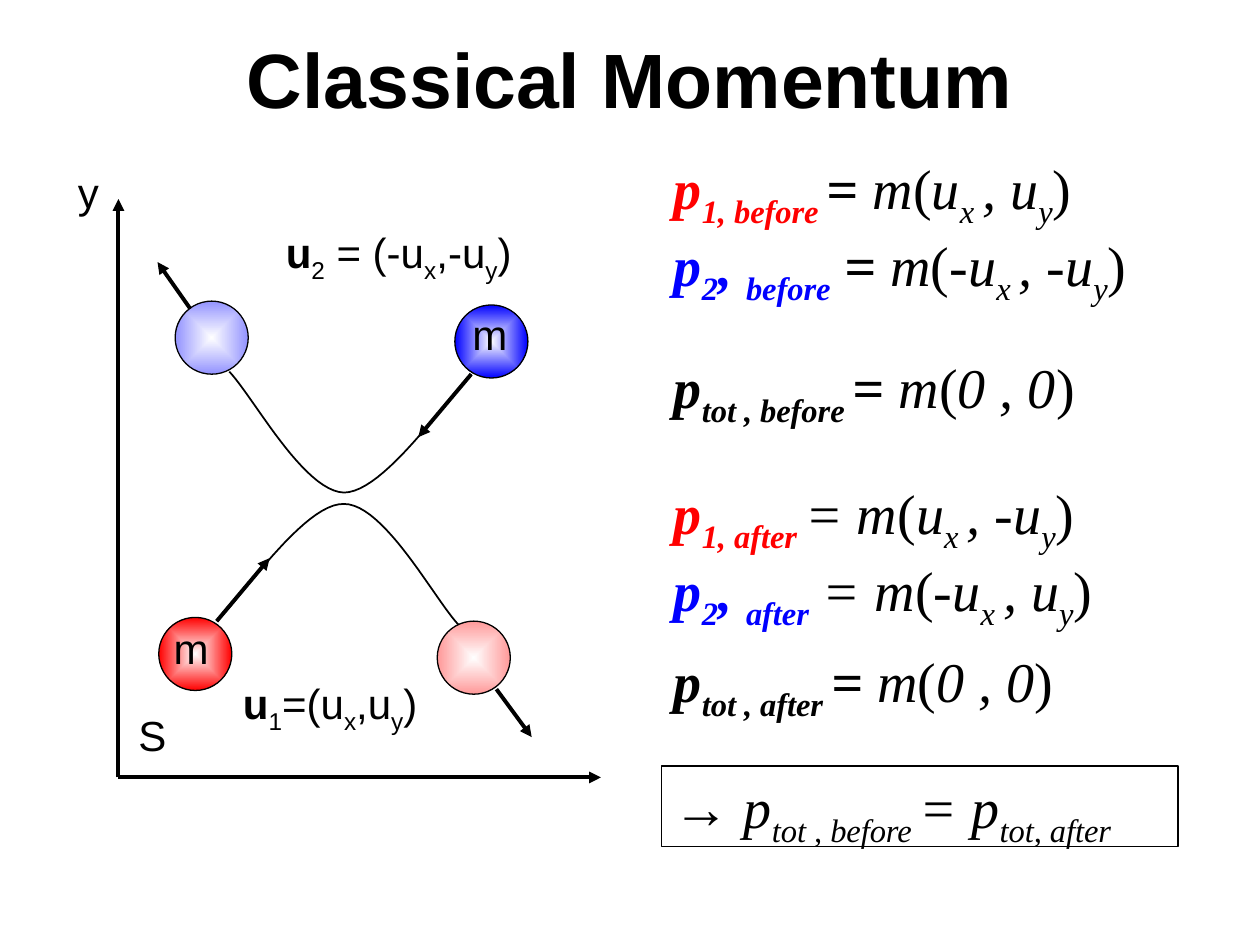
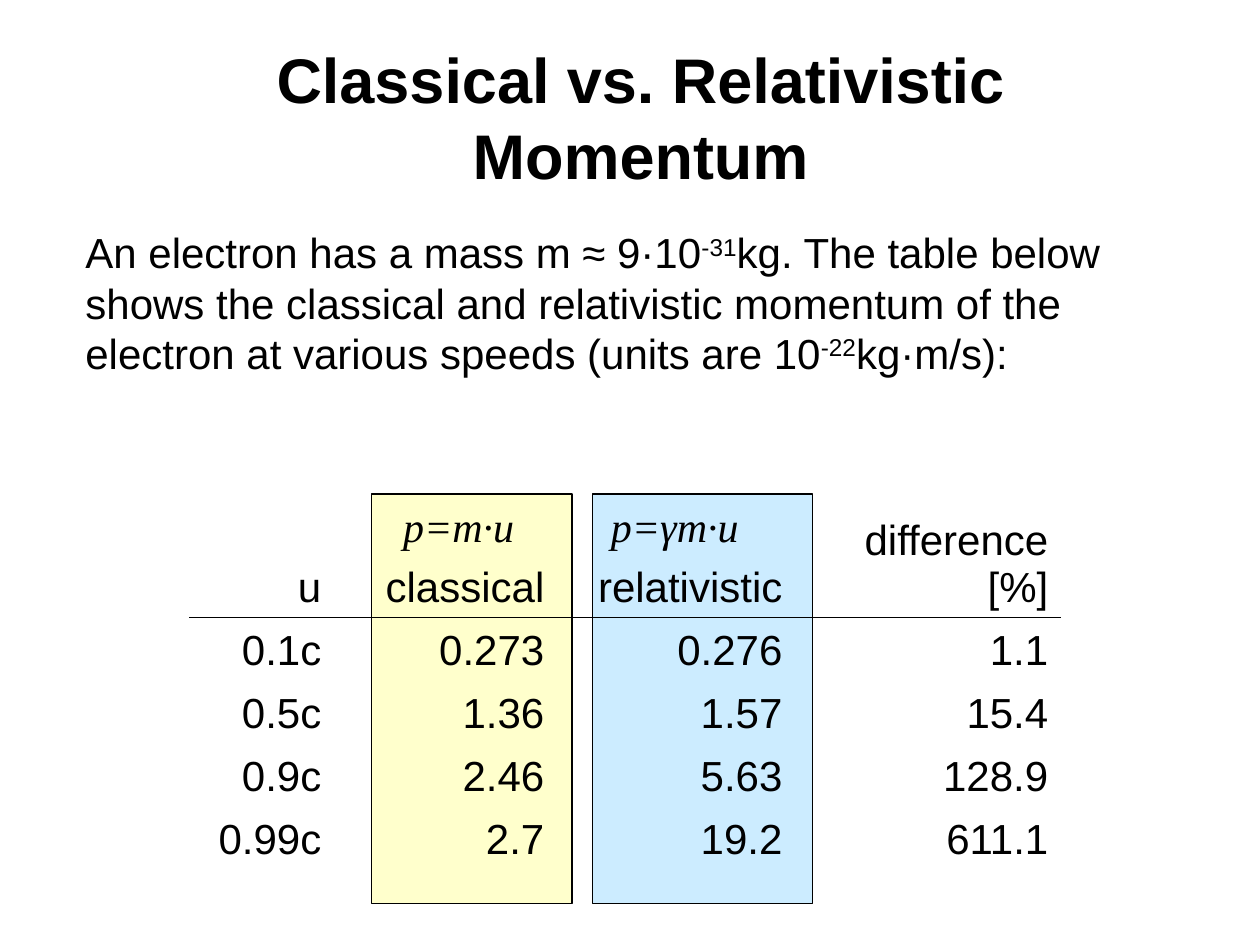
"""Build two slides on classical and relativistic momentum."""
from dataclasses import dataclass

import pptx
import pptx.chart.data
import pptx.dml.color
import pptx.enum.shapes
import pptx.enum.text
import pptx.oxml.ns
import pptx.util
from lxml import etree

Inches = pptx.util.Inches
Pt = pptx.util.Pt
qn = pptx.oxml.ns.qn
SHAPE = pptx.enum.shapes.MSO_SHAPE
ANCHOR = pptx.enum.text.MSO_ANCHOR
ALIGN = pptx.enum.text.PP_ALIGN


@dataclass(frozen=True)
class Theme:
    """Colours, fonts and sizes shared by the slides."""
    ink: str = "000000"
    white: str = "FFFFFF"
    red: str = "FF0000"
    pale_red: str = "FF9999"
    blue: str = "0000FF"
    pale_blue: str = "9393FF"
    yellow: str = "FFFFCC"
    sky: str = "CCECFF"
    sans: str = "Arial"
    serif: str = "Times New Roman"
    label: int = 24
    equation: int = 32
    outline: float = 0.75
    table_line: float = 1
    arrow: float = 2.25


THEME = Theme()
BALL_SIZE = 0.58
EQUATION_LEFT = 5.25
NO_TABLE_STYLE = "{2D5ABB26-0587-4C30-8999-92F81FD0307C}"


def rgb(code):
    """Turn a hex code into a colour."""
    return pptx.dml.color.RGBColor.from_string(code)


def style_run(run, size, font, color=THEME.ink, bold=False, italic=False):
    """Apply the character format to a run."""
    run.font.size = Pt(size)
    run.font.name = font
    run.font.color.rgb = rgb(color)
    run.font.bold = bold
    run.font.italic = italic


def add_runs(paragraph, pieces, size, font):
    """Write (text, flags) pieces: b bold, i italic, r red, l blue, _ sub, ^ super."""
    for text, flags in pieces:
        run = paragraph.add_run()
        run.text = text
        color = THEME.red if "r" in flags else THEME.blue if "l" in flags else THEME.ink
        style_run(run, size, font, color, "b" in flags, "i" in flags)
        if "_" in flags:
            run.font._element.set("baseline", "-25000")
        elif "^" in flags:
            run.font._element.set("baseline", "30000")


def add_text(slide, left, top, width, height, lines,
             size=THEME.label, font=THEME.sans):
    """Add a text box with one paragraph for each line of pieces."""
    box = slide.shapes.add_textbox(Inches(left), Inches(top), Inches(width), Inches(height))
    frame = box.text_frame
    frame.word_wrap = True
    for number, pieces in enumerate(lines):
        paragraph = frame.add_paragraph() if number else frame.paragraphs[0]
        add_runs(paragraph, pieces, size, font)
    return box


def add_equations(slide, top, *lines):
    """Add equations, one to a line, in the right-hand column."""
    return add_text(slide, EQUATION_LEFT, top, 4.1, 0.64 * len(lines), lines,
                    THEME.equation, THEME.serif)


def outline(shape, width=THEME.outline):
    """Give a shape a black outline and no shadow."""
    shape.line.color.rgb = rgb(THEME.ink)
    shape.line.width = Pt(width)
    shape.shadow.inherit = False


def add_panel(slide, left, width, color):
    """Add a coloured panel behind a table column."""
    panel = slide.shapes.add_shape(SHAPE.RECTANGLE, Inches(left), Inches(3.92),
                                   Inches(width), Inches(3.25))
    panel.fill.solid()
    panel.fill.fore_color.rgb = rgb(color)
    outline(panel)


def add_ball(slide, left, top, color):
    """Add a ball shaded from a white centre to its colour."""
    ball = slide.shapes.add_shape(SHAPE.OVAL, Inches(left), Inches(top),
                                  Inches(BALL_SIZE), Inches(BALL_SIZE))
    ball.fill.gradient()
    for stop, shade, position in zip(ball.fill.gradient_stops, (THEME.white, color), (0, 1)):
        stop.color.rgb = rgb(shade)
        stop.position = position
    gradient = ball._element.spPr.find(qn("a:gradFill"))
    linear = gradient.find(qn("a:lin"))
    radial = etree.Element(qn("a:path"), {"path": "shape"})
    etree.SubElement(radial, qn("a:fillToRect"), dict.fromkeys("ltrb", "50000"))
    gradient.replace(linear, radial)
    outline(ball)


def add_arrow(slide, start, end):
    """Add a straight arrow between two points."""
    arrow = slide.shapes.add_connector(pptx.enum.shapes.MSO_CONNECTOR.STRAIGHT,
                                       *map(Inches, (*start, *end)))
    arrow.line.color.rgb = rgb(THEME.ink)
    arrow.line.width = Pt(THEME.arrow)
    etree.SubElement(arrow.line._get_or_add_ln(), qn("a:tailEnd"), {"type": "triangle"})
    etree.SubElement(arrow._element.spPr, qn("a:effectLst"))


def bezier(points, steps=24):
    """Return points along one cubic curve, without its start."""
    curve = []
    for step in range(1, steps + 1):
        t = step / steps
        weights = ((1 - t) ** 3, 3 * t * (1 - t) ** 2, 3 * t * t * (1 - t), t ** 3)
        curve.append(tuple(Inches(sum(w * point[axis] for w, point in zip(weights, points)))
                           for axis in (0, 1)))
    return curve


def add_trajectory(slide, points):
    """Draw a path through two joined cubic curves."""
    builder = slide.shapes.build_freeform(*map(Inches, points[0]))
    builder.add_line_segments(bezier(points[:4]) + bezier(points[3:]), close=False)
    trajectory = builder.convert_to_shape()
    trajectory.fill.background()
    outline(trajectory, 1)


def add_slide(deck, title, size, left, top, width):
    """Add a slide with a bold centred title."""
    slide = deck.slides.add_slide(deck.slide_layouts[5])
    heading = slide.shapes.title
    heading.left, heading.top = Inches(left), Inches(top)
    heading.width, heading.height = Inches(width), Inches(1.25)
    frame = heading.text_frame
    frame.text = title
    frame.auto_size = pptx.enum.text.MSO_AUTO_SIZE.NONE
    frame.vertical_anchor = ANCHOR.MIDDLE
    frame.paragraphs[0].alignment = ALIGN.CENTER
    for run in frame.paragraphs[0].runs:
        style_run(run, size, THEME.sans, bold=True)
    return slide


def velocity(number, equals, sign=""):
    """Return the pieces of a velocity label."""
    return [("u", "b"), (number, "_"), (f"{equals}({sign}u", ""), ("x", "_"),
            (f",{sign}u", ""), ("y", "_"), (")", "")]


def components(ux, uy):
    """Return the pieces of a bracketed pair of components."""
    return [("m", "i"), ("(", ""), (ux, "i"), ("x ", "i_"), (f", {uy}", "i"),
            ("y", "i_"), (")", "")]


def red_momentum(when, weight):
    """Return the left side for the first ball."""
    return [("p", "bir"), (f"1, {when} ", "bir_"), ("= ", "i" + weight)]


def blue_momentum(when, weight):
    """Return the left side for the second ball."""
    return [("p", "bil"), ("2", "bil_"), (", ", "bil"), (when, "bil_"),
            (" = ", "i" + weight)]


def total_momentum(when):
    """Return the equation for the total momentum."""
    return [("p", "bi"), (f"tot , {when} ", "bi_"), ("= ", "bi"), ("m", "i"),
            ("(", ""), ("0 , 0", "i"), (")", "")]


def add_collision(slide):
    """Draw the two balls, their trajectories and the axes."""
    add_trajectory(slide, [(1.72, 4.93), (1.89, 4.78), (2.41, 3.99), (2.73, 4),
                           (3.05, 4), (3.45, 4.76), (3.64, 4.96)])
    add_trajectory(slide, [(3.74, 2.97), (3.57, 3.13), (3.05, 3.91), (2.73, 3.91),
                           (2.41, 3.9), (2.01, 3.15), (1.82, 2.95)])
    for left, top, color in ((1.26, 4.9, THEME.red), (3.47, 4.93, THEME.pale_red),
                             (3.61, 2.42, THEME.blue), (1.39, 2.39, THEME.pale_blue)):
        add_ball(slide, left, top, color)
    origin = (0.94, 6.17)
    for start, end in (((1.72, 4.93), (2.14, 4.43)), ((3.94, 5.47), (4.22, 5.85)),
                       ((3.74, 2.97), (3.32, 3.47)), ((1.51, 2.45), (1.25, 2.08)),
                       (origin, (4.77, 6.17)), (origin, (0.94, 1.58))):
        add_arrow(slide, start, end)
    for text, left, top in (("y", 0.52, 1.27), ("m", 1.28, 4.89),
                            ("m", 3.65, 2.4), ("S", 1, 5.58)):
        add_text(slide, left, top, 0.55, 0.57, [[(text, "")]])
    add_text(slide, 1.83, 5.33, 1.75, 0.5, [velocity("1", "=")])
    add_text(slide, 2.17, 1.75, 2.16, 0.5, [velocity("2", " = ", "-")])


def add_classical_slide(deck):
    """Build the slide on momentum before and after a collision."""
    slide = add_slide(deck, "Classical Momentum", 44, 0.5, -0.01, 9)
    add_collision(slide)
    add_equations(slide, 1.17, red_momentum("before", "b") + components("u", "u"),
                  blue_momentum("before", "b") + components("-u", "-u"))
    add_equations(slide, 2.75, total_momentum("before"))
    add_equations(slide, 3.75, red_momentum("after", "") + components("u", "-u"),
                  blue_momentum("after", "") + components("-u", "u"))
    add_equations(slide, 5.08, total_momentum("after"))
    conservation = add_equations(slide, 6.08, [("→ ", ""), ("p", "i"), ("tot , before ", "i_"),
                                               ("= p", "i"), ("tot, after", "i_")])
    outline(conservation)


def underline_cell(cell):
    """Draw a line under a table cell."""
    border = etree.Element(qn("a:lnB"), {"w": str(Pt(THEME.table_line))})
    fill = etree.SubElement(border, qn("a:solidFill"))
    etree.SubElement(fill, qn("a:srgbClr"), {"val": THEME.ink})
    cell._tc.get_or_add_tcPr().insert(0, border)


def add_momentum_table(slide, rows, widths):
    """Add the right-aligned table with a line under its header."""
    heights = [0.9] + [0.5] * (len(rows) - 1)
    table = slide.shapes.add_table(len(rows), len(widths), Inches(1.5), Inches(4),
                                   Inches(sum(widths)), Inches(sum(heights))).table
    table.first_row = table.horz_banding = False
    table._tbl.tblPr.find(qn("a:tableStyleId")).text = NO_TABLE_STYLE
    for column, width in zip(table.columns, widths):
        column.width = Inches(width)
    for number, (row, height, values) in enumerate(zip(table.rows, heights, rows)):
        row.height = Inches(height)
        for cell, value in zip(row.cells, values):
            cell.text = value
            cell.fill.background()
            cell.vertical_anchor = ANCHOR.BOTTOM
            paragraph = cell.text_frame.paragraphs[0]
            paragraph.alignment = ALIGN.RIGHT
            style_run(paragraph.runs[0], THEME.label, THEME.sans)
            if number == 0:
                underline_cell(cell)


def add_comparison_slide(deck):
    """Build the slide comparing classical and relativistic momentum."""
    slide = add_slide(deck, "Classical vs. Relativistic\vMomentum", 36, 0.42, 0.3, 9.33)
    add_panel(slide, 4.7, 1.75, THEME.sky)
    add_panel(slide, 2.95, 1.59, THEME.yellow)
    add_text(slide, 0.58, 1.75, 8.93, 1.97, [[
        ("An electron has a mass m ≈ 9·10", ""), ("-31", "^"),
        ("kg. The table below shows the classical and relativistic momentum of the "
         "electron at various speeds (units are 10", ""), ("-22", "^"), ("kg·m/s):", "")]])
    add_momentum_table(slide, [("u", "classical", "relativistic", "difference [%]"),
                               ("0.1c", "0.273", "0.276", "1.1"),
                               ("0.5c", "1.36", "1.57", "15.4"),
                               ("0.9c", "2.46", "5.63", "128.9"),
                               ("0.99c", "2.7", "19.2", "611.1")],
                       (1.15, 1.77, 1.89, 2.11))
    for formula, left in (("p=m·u", 3.1), ("p=γm·u", 4.75)):
        add_text(slide, left, 3.92, 1.38, 0.57, [[(formula, "i")]], font=THEME.serif)


def main():
    """Build and save the deck."""
    deck = pptx.Presentation()
    deck.slide_width, deck.slide_height = Inches(10), Inches(7.5)
    add_classical_slide(deck)
    add_comparison_slide(deck)
    deck.save("out.pptx")


if __name__ == "__main__":
    main()
